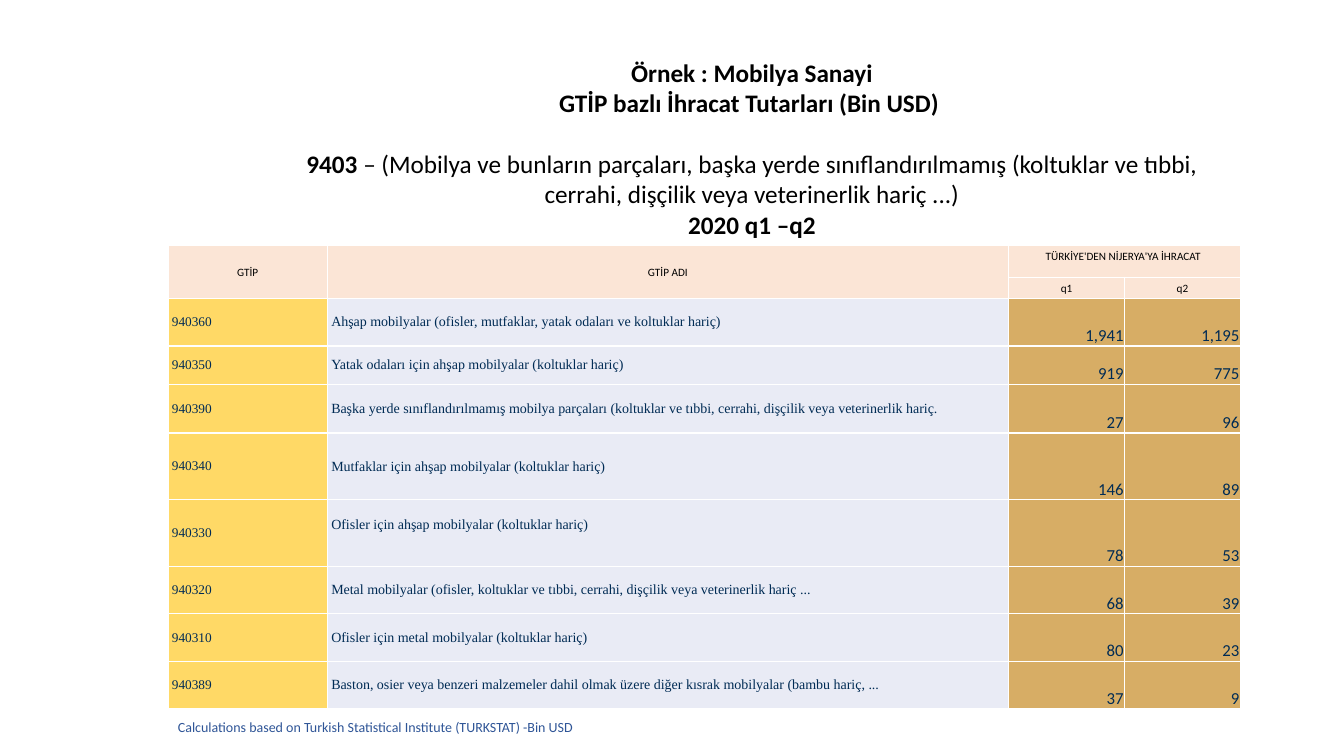
import dataclasses

import pptx
import pptx.dml.color
import pptx.enum.text
import pptx.oxml
import pptx.oxml.ns
import pptx.util

ALIGN = pptx.enum.text.PP_ALIGN
ANCHOR = pptx.enum.text.MSO_ANCHOR
SLIDE_WIDTH = pptx.util.Inches(13.33)
SLIDE_HEIGHT = pptx.util.Inches(7.5)


@dataclasses.dataclass(frozen=True)
class Theme:
    sans: str = "Calibri"
    serif: str = "Times New Roman"
    black: str = "000000"
    navy: str = "002B54"
    source_blue: str = "2F5597"
    header_fill: str = "FBE5D6"
    code_fill: str = "FFD966"
    name_fill: str = "E9EBF5"
    value_fill: str = "D7AD65"
    border: str = "FFFFFF"
    border_width: int = 12700
    heading_size: float = 18
    header_size: float = 8
    code_size: float = 9.5
    name_size: float = 10
    value_size: float = 12
    source_size: float = 10


THEME = Theme()
TIGHT = (0.01, 0.01, 0.01, 0)
ROOMY = (0.04, 0.04, 0.04, 0.04)
HEADER = dict(fill=THEME.header_fill, font=THEME.sans, size=THEME.header_size,
              color=THEME.black, align=ALIGN.CENTER, anchor=ANCHOR.MIDDLE, insets=TIGHT)
RAISED_HEADER = {**HEADER, "anchor": ANCHOR.BOTTOM, "insets": (0.01, 0.01, 0.01, 0.14)}
CODE = dict(fill=THEME.code_fill, font=THEME.serif, size=THEME.code_size,
            color=THEME.navy, align=ALIGN.LEFT, anchor=ANCHOR.MIDDLE, insets=ROOMY)
NAME = {**CODE, "fill": THEME.name_fill, "size": THEME.name_size}
RAISED_NAME = {**NAME, "insets": (0.04, 0.04, 0.04, 0.2)}
VALUE = dict(fill=THEME.value_fill, font=THEME.sans, size=THEME.value_size,
             color=THEME.navy, align=ALIGN.RIGHT, anchor=ANCHOR.BOTTOM, insets=TIGHT)

# Boxes are left, top, width, height as shares of the slide.
HEADING_BOX = (0.215, 0.069, 0.689, 0.336)
TABLE_BOX = (0.125, 0.324, 0.798, 0.614)
SOURCE_BOX = (0.125, 0.944, 0.314, 0.036)

COLUMN_SHARES = (1.58, 6.76, 1.15, 1.15)
HEADER_ROW_SHARES = (0.32, 0.21)

# Code, name, q1, q2, row share, style of the name.
EXPORTS = [
    ("940360", "Ahşap mobilyalar (ofisler, mutfaklar, yatak odaları ve koltuklar hariç)",
     "1,941", "1,195", 0.47, NAME),
    ("940350", "Yatak odaları için ahşap mobilyalar (koltuklar hariç)",
     "919", "775", 0.38, NAME),
    ("940390", "Başka yerde sınıflandırılmamış mobilya parçaları (koltuklar ve tıbbi, "
     "cerrahi, dişçilik veya veterinerlik hariç.", "27", "96", 0.48, NAME),
    ("940340", "Mutfaklar için ahşap mobilyalar (koltuklar hariç)",
     "146", "89", 0.66, NAME),
    ("940330", "Ofisler için ahşap mobilyalar (koltuklar hariç)",
     "78", "53", 0.66, RAISED_NAME),
    ("940320", "Metal mobilyalar (ofisler, koltuklar ve tıbbi, cerrahi, dişçilik veya "
     "veterinerlik hariç ...", "68", "39", 0.47, NAME),
    ("940310", "Ofisler için metal mobilyalar (koltuklar hariç)",
     "80", "23", 0.47, NAME),
    ("940389", "Baston, osier veya benzeri malzemeler dahil olmak üzere diğer kısrak "
     "mobilyalar (bambu hariç, ...", "37", "9", 0.47, NAME),
]

# Each paragraph is its space before in points and its (text, bold) runs.
HEADING = [
    (0, [("Örnek : Mobilya Sanayi", True)]),
    (0, [("GTİP bazlı İhracat Tutarları (Bin USD) ", True)]),
    (22, [("9403 ", True),
          ("– (Mobilya ve bunların parçaları, başka yerde sınıflandırılmamış (koltuklar "
           "ve tıbbi, cerrahi, dişçilik veya veterinerlik hariç ...)", False)]),
    (0, [("2020 q1 –q2", True)]),
]
SOURCE = "Calculations based on Turkish Statistical Institute (TURKSTAT) -Bin USD"


def rgb(color):
    return pptx.dml.color.RGBColor.from_string(color)


def on_slide(box):
    """Turn shares of the slide into lengths."""
    extents = (SLIDE_WIDTH, SLIDE_HEIGHT) * 2
    return [round(share * extent) for share, extent in zip(box, extents)]


def add_run(paragraph, text, font, size, color, bold=False):
    run = paragraph.add_run()
    run.text = text
    for attribute, value in dict(name=font, size=pptx.util.Pt(size), bold=bold).items():
        setattr(run.font, attribute, value)
    run.font.color.rgb = rgb(color)


def add_text_frame(slide, box):
    frame = slide.shapes.add_textbox(*on_slide(box)).text_frame
    frame.word_wrap = True
    return frame


def add_borders(cell):
    for side in ("lnL", "lnR", "lnT", "lnB"):
        cell._tc.get_or_add_tcPr().append(pptx.oxml.parse_xml(
            f'<a:{side} {pptx.oxml.ns.nsdecls("a")} w="{THEME.border_width}"><a:solidFill>'
            f'<a:srgbClr val="{THEME.border}"/></a:solidFill></a:{side}>'))


def fill_cell(cell, text, style):
    add_borders(cell)
    cell.fill.solid()
    cell.fill.fore_color.rgb = rgb(style["fill"])
    cell.vertical_anchor = style["anchor"]
    for side, inset in zip(("left", "top", "right", "bottom"), style["insets"]):
        setattr(cell, f"margin_{side}", pptx.util.Inches(inset))
    paragraph = cell.text_frame.paragraphs[0]
    paragraph.alignment = style["align"]
    if text:
        add_run(paragraph, text, style["font"], style["size"], style["color"])


def add_export_table(slide, box):
    left, top, width, height = on_slide(box)
    row_shares = [*HEADER_ROW_SHARES, *(export[4] for export in EXPORTS)]
    table = slide.shapes.add_table(len(row_shares), len(COLUMN_SHARES),
                                   left, top, width, height).table
    table.first_row = table.horz_banding = False
    for column, share in zip(table.columns, COLUMN_SHARES):
        column.width = round(width * share / sum(COLUMN_SHARES))
    for row, share in zip(table.rows, row_shares):
        row.height = round(height * share / sum(row_shares))

    rows = [
        [("GTİP", HEADER), ("GTİP ADI", HEADER),
         ("TÜRKİYE'DEN NİJERYA'YA İHRACAT ", RAISED_HEADER), ("", HEADER)],
        [("", HEADER), ("", HEADER), ("q1", HEADER), ("q2", HEADER)],
    ]
    rows += [[(code, CODE), (name, name_style), (q1, VALUE), (q2, VALUE)]
             for code, name, q1, q2, _, name_style in EXPORTS]
    for row_index, row in enumerate(rows):
        for column_index, (text, style) in enumerate(row):
            fill_cell(table.cell(row_index, column_index), text, style)
    for first, last in (((0, 0), (1, 0)), ((0, 1), (1, 1)), ((0, 2), (0, 3))):
        table.cell(*first).merge(table.cell(*last))


def add_source(slide, box):
    paragraph = add_text_frame(slide, box).paragraphs[0]
    add_run(paragraph, SOURCE, THEME.sans, THEME.source_size, THEME.source_blue)


def add_heading(slide, box):
    frame = add_text_frame(slide, box)
    for index, (space_before, runs) in enumerate(HEADING):
        paragraph = frame.add_paragraph() if index else frame.paragraphs[0]
        paragraph.alignment = ALIGN.CENTER
        if space_before:
            paragraph.space_before = pptx.util.Pt(space_before)
        for text, bold in runs:
            add_run(paragraph, text, THEME.sans, THEME.heading_size, THEME.black, bold)


def main():
    presentation = pptx.Presentation()
    presentation.slide_width = SLIDE_WIDTH
    presentation.slide_height = SLIDE_HEIGHT
    slide = presentation.slides.add_slide(presentation.slide_layouts[6])
    add_export_table(slide, TABLE_BOX)
    add_source(slide, SOURCE_BOX)
    add_heading(slide, HEADING_BOX)
    presentation.save("out.pptx")


if __name__ == "__main__":
    main()
